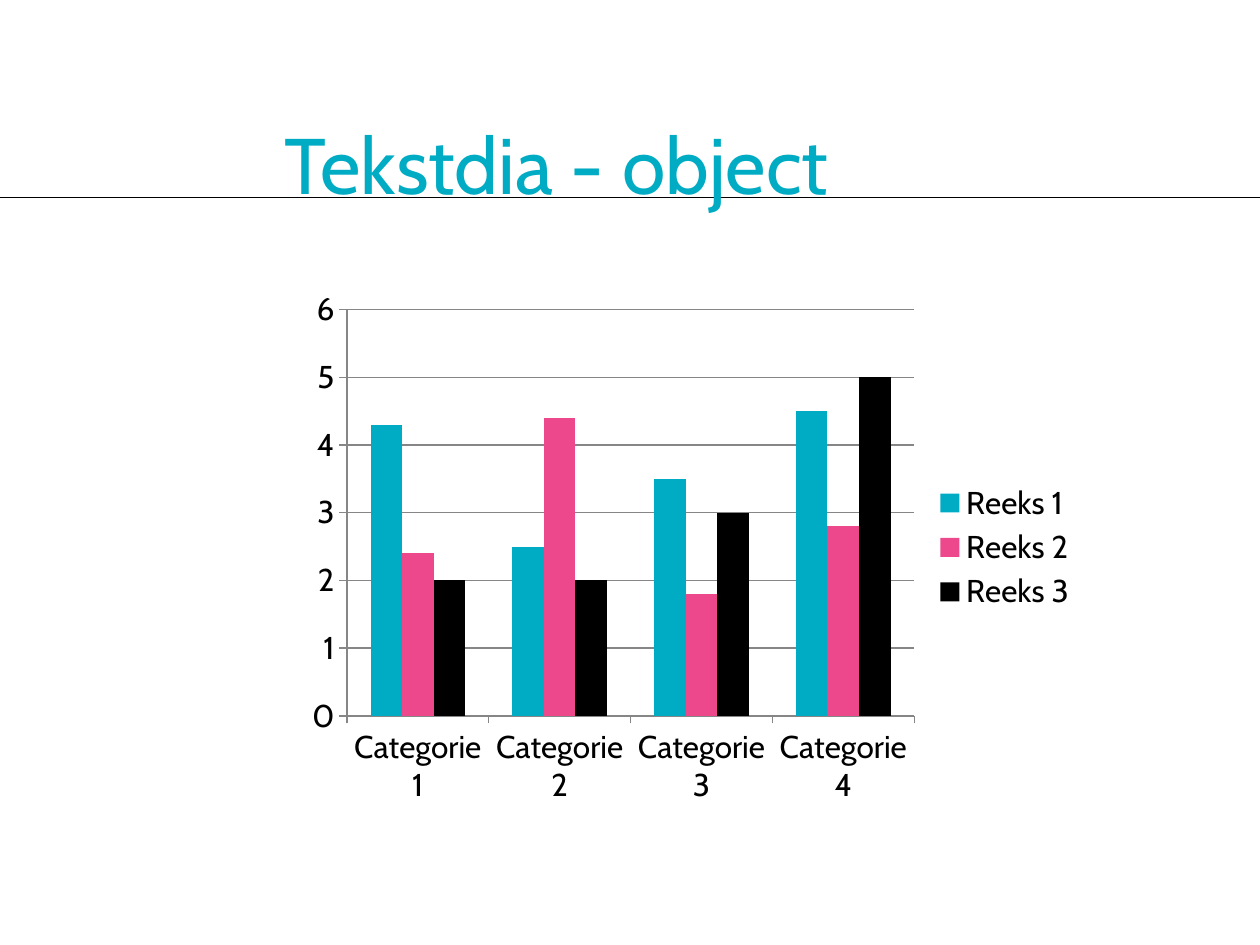
from lxml import etree
from pptx import Presentation
from pptx.chart.data import CategoryChartData
from pptx.dml.color import RGBColor
from pptx.enum import chart as ch, shapes, text
from pptx.oxml.ns import qn
from pptx.util import Inches, Pt

FONT = "Cabin"
TEAL = RGBColor(0x00, 0xAB, 0xC4)
PINK = RGBColor(0xED, 0x48, 0x8C)
BLACK = RGBColor(0, 0, 0)
GREY = RGBColor(0x86, 0x86, 0x86)

TITLE = "Tekstdia - object"
CATEGORIES = ["Categorie 1", "Categorie 2", "Categorie 3", "Categorie 4"]
SERIES = [
    ("Reeks 1", (4.3, 2.5, 3.5, 4.5), TEAL),
    ("Reeks 2", (2.4, 4.4, 1.8, 2.8), PINK),
    ("Reeks 3", (2, 2, 3, 5), BLACK),
]


def add_rule(slide, width):
    y = Inches(1.57)
    rule = slide.shapes.add_connector(shapes.MSO_CONNECTOR.STRAIGHT, 0, y, width, y)
    rule.line.color.rgb = BLACK
    rule.line.width = Pt(0.7)
    etree.SubElement(rule._element.spPr, qn("a:effectLst"))


def add_title(slide):
    title = slide.shapes.add_textbox(Inches(2.26), Inches(0.94), Inches(7.28), Inches(0.71))
    frame = title.text_frame
    frame.word_wrap = True
    frame.vertical_anchor = text.MSO_ANCHOR.MIDDLE
    frame.margin_left = frame.margin_right = frame.margin_top = frame.margin_bottom = 0
    frame.text = TITLE
    font = frame.paragraphs[0].runs[0].font
    font.name, font.size = FONT, Pt(45)
    font.color.rgb = TEAL


def add_column_chart(slide):
    data = CategoryChartData()
    data.categories = CATEGORIES
    for name, values, _ in SERIES:
        data.add_series(name, values)
    chart = slide.shapes.add_chart(
        ch.XL_CHART_TYPE.COLUMN_CLUSTERED,
        Inches(2.35), Inches(2.22), Inches(6.3), Inches(4.25), data).chart
    chart.has_title = False
    chart.font.name, chart.font.size = FONT, Pt(18)
    chart.font.color.rgb = BLACK

    chart.has_legend = True
    chart.legend.position = ch.XL_LEGEND_POSITION.RIGHT
    chart.legend.include_in_layout = False

    for axis in (chart.category_axis, chart.value_axis):
        axis.major_tick_mark = ch.XL_TICK_MARK.OUTSIDE
        axis.minor_tick_mark = ch.XL_TICK_MARK.NONE
        axis.format.line.color.rgb = GREY
    chart.value_axis.has_major_gridlines = True
    chart.value_axis.major_gridlines.format.line.color.rgb = GREY

    plot = chart.plots[0]
    plot.gap_width = 150
    plot.vary_by_categories = False
    for series, (_, _, color) in zip(plot.series, SERIES):
        series.format.fill.solid()
        series.format.fill.fore_color.rgb = color


def main():
    deck = Presentation()
    deck.slide_width, deck.slide_height = Inches(10), Inches(7.5)
    slide = deck.slides.add_slide(deck.slide_layouts[6])
    add_rule(slide, deck.slide_width)
    add_title(slide)
    add_column_chart(slide)
    deck.save("out.pptx")


if __name__ == "__main__":
    main()
